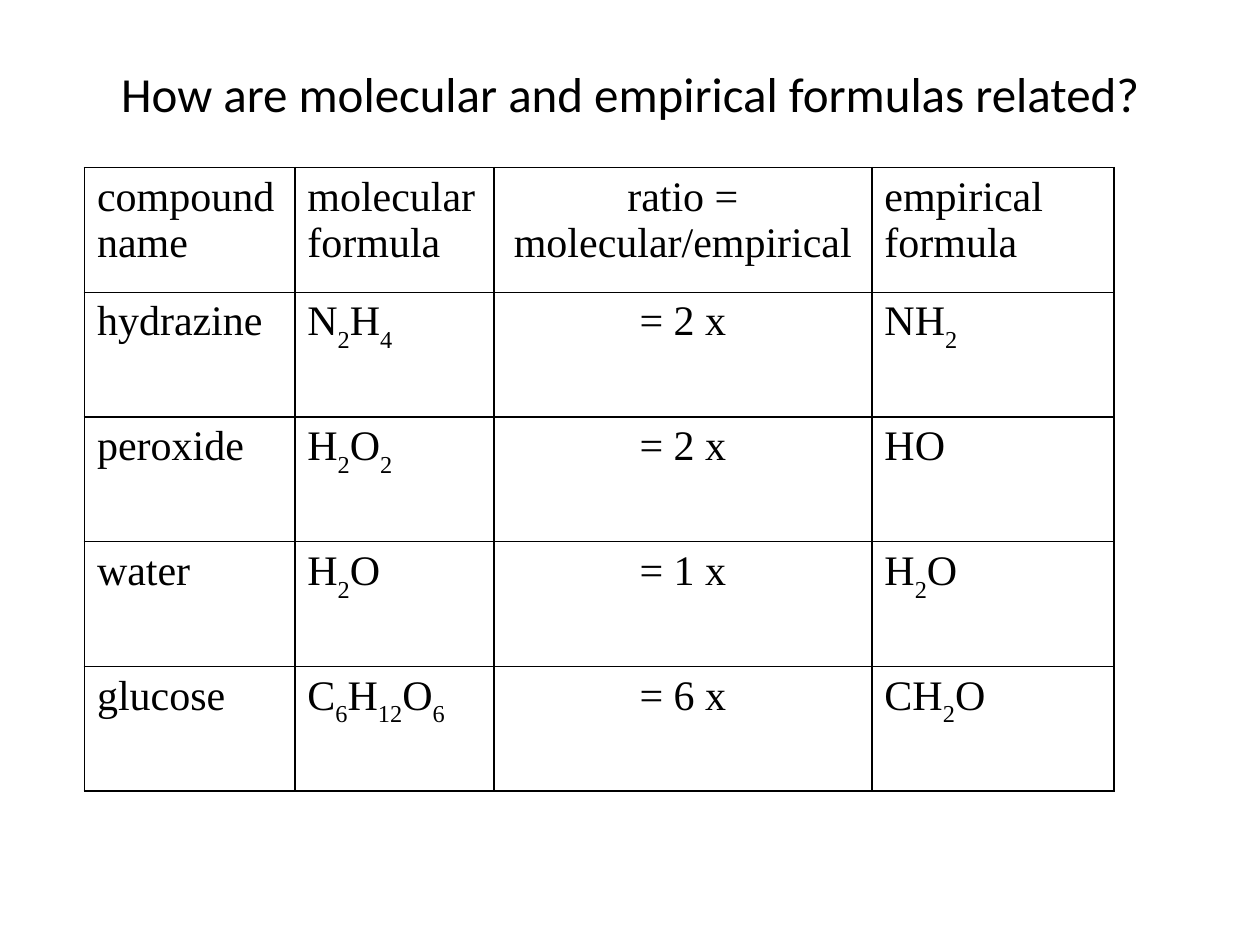
from itertools import groupby

from lxml import etree
from pptx import Presentation
from pptx.dml.color import RGBColor
from pptx.enum.text import MSO_ANCHOR, PP_ALIGN
from pptx.oxml.ns import qn
from pptx.util import Inches, Pt

LEFT, CENTER = PP_ALIGN.LEFT, PP_ALIGN.CENTER
MIDDLE = MSO_ANCHOR.MIDDLE
TITLE_ONLY = 5

COLORS = {"text": "000000", "border": "000000"}
TITLE_FONT = {"name": "Calibri", "size": Pt(28), "bold": False}
CELL_FONT = {"name": "Times New Roman", "size": Pt(24), "bold": False}

COL_WIDTHS = [1.67, 1.58, 3, 1.92]
COL_ALIGNS = [LEFT, LEFT, CENTER, LEFT]
ROW_HEIGHT = 0.99
FORMULA_COLS = (1, 3)
ROWS = [
    ["compound name", "molecular formula", "ratio = molecular/empirical", "empirical formula"],
    ["hydrazine", "N2H4", "= 2 x", "NH2"],
    ["peroxide", "H2O2", "= 2 x", "HO"],
    ["water", "H2O", "= 1 x", "H2O"],
    ["glucose", "C6H12O6", "= 6 x", "CH2O"],
]


def add_run(p, text, font):
    r = p.add_run()
    r.text = text
    for name, value in font.items():
        setattr(r.font, name, value)
    r.font.color.rgb = RGBColor.from_string(COLORS["text"])
    return r


def add_formula(p, formula):
    """Write a chemical formula with its digits as subscripts."""
    for is_digit, chars in groupby(formula, str.isdigit):
        r = add_run(p, "".join(chars), CELL_FONT)
        if is_digit:
            r.font._element.set("baseline", "-30000")


def set_borders(cell):
    tcPr = cell._tc.get_or_add_tcPr()
    for side in ("lnL", "lnR", "lnT", "lnB"):
        ln = etree.SubElement(tcPr, qn(f"a:{side}"), w=str(Pt(1)))
        fill = etree.SubElement(ln, qn("a:solidFill"))
        etree.SubElement(fill, qn("a:srgbClr"), val=COLORS["border"])


def add_title(s, text):
    title = s.shapes.title
    title.left, title.top = Inches(0.5), Inches(0.3)
    title.width, title.height = Inches(9), Inches(0.87)
    tf = title.text_frame
    tf.vertical_anchor = MIDDLE
    p = tf.paragraphs[0]
    p.alignment = CENTER
    add_run(p, text, TITLE_FONT)


def add_formula_table(s):
    table = s.shapes.add_table(
        len(ROWS), len(COL_WIDTHS), Inches(0.67), Inches(1.33),
        Inches(sum(COL_WIDTHS)), Inches(ROW_HEIGHT * len(ROWS))).table
    table.first_row = table.horz_banding = False
    for column, width in zip(table.columns, COL_WIDTHS):
        column.width = Inches(width)
    for i, texts in enumerate(ROWS):
        table.rows[i].height = Inches(ROW_HEIGHT)
        for j, text in enumerate(texts):
            cell = table.cell(i, j)
            set_borders(cell)
            cell.fill.background()
            p = cell.text_frame.paragraphs[0]
            p.alignment = COL_ALIGNS[j]
            if i > 0 and j in FORMULA_COLS:
                add_formula(p, text)
            else:
                add_run(p, text, CELL_FONT)


def main():
    prs = Presentation()
    prs.slide_width, prs.slide_height = Inches(10), Inches(7.5)
    s = prs.slides.add_slide(prs.slide_layouts[TITLE_ONLY])
    add_title(s, "How are molecular and empirical formulas related?")
    add_formula_table(s)
    prs.save("out.pptx")


if __name__ == "__main__":
    main()
